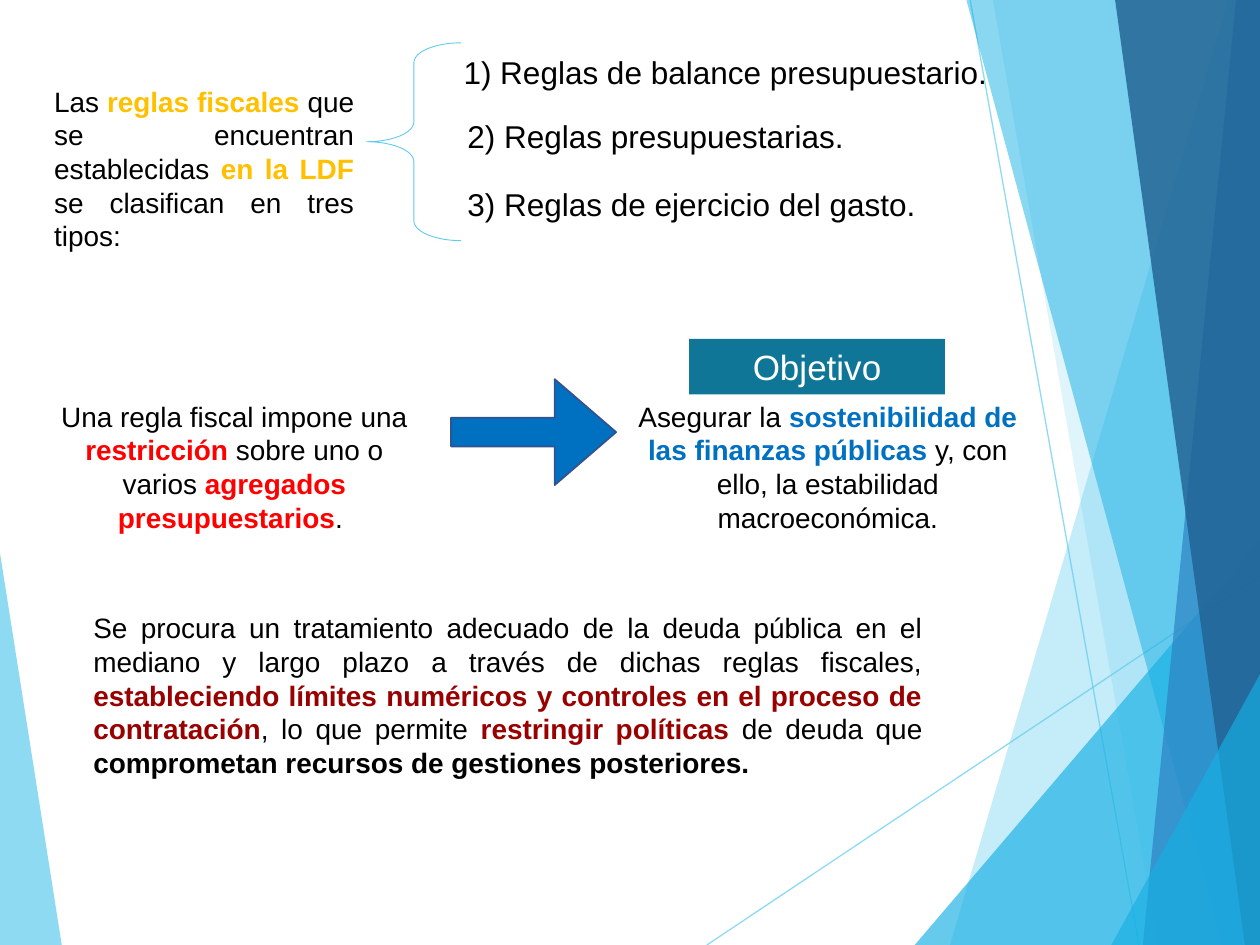
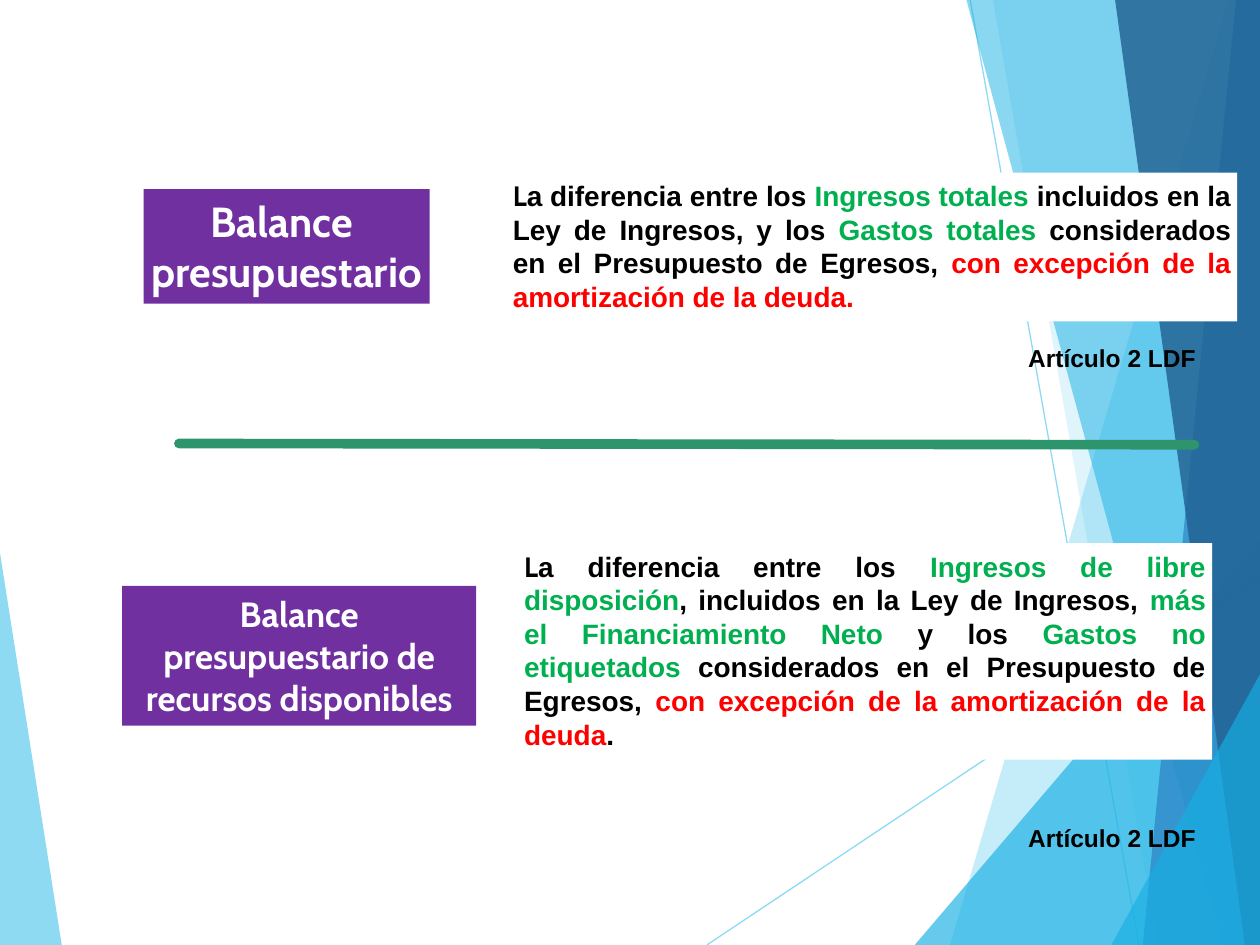
from pptx import Presentation, util as u
from pptx.dml.color import RGBColor
from pptx.enum import shapes, text
from pptx.oxml.ns import qn
from lxml import etree

WIDTH, HEIGHT = u.Inches(10), u.Inches(7.5)
COLUMNS, ROWS = 100, 75

BLACK, WHITE, RED, GREEN = "000000", "FFFFFF", "FF0000", "00B050"
GOLD, BLUE, NAVY, MAROON = "FFC000", "0070C0", "32538F", "990000"
TEAL, PURPLE, SEA = "0F7698", "7030A0", "2E946B"
SKY, CYAN, STEEL, DEEP = "5FCBEF", "17B0E4", "2E83C3", "226292"

LEFT, CENTER, JUSTIFY = (text.PP_ALIGN.LEFT, text.PP_ALIGN.CENTER,
                         text.PP_ALIGN.JUSTIFY)

LEFT_BAND = (SKY, 70, [(0, 43.9), (4.9, 75), (0, 75)])
RIGHT_BANDS = [
    (SKY, 36, [(97.5, 0), (75.4, 75), (100, 75), (100, 0)]),
    (SKY, 20, [(78.8, 0), (91.9, 75), (100, 75), (100, 0)]),
    (CYAN, 66, [(72.6, 75), (100, 42.9), (100, 75)]),
    (CYAN, 50, [(76.7, 0), (97, 75), (100, 75), (100, 0)]),
    (STEEL, 70, [(98.1, 0), (90.7, 75), (100, 75), (100, 0)]),
    (DEEP, 82, [(88.5, 0), (98.8, 75), (100, 75), (100, 0)]),
    (CYAN, 66, [(88.2, 75), (100, 53.5), (100, 75)]),
]
RAYS = [((56.1, 75), (100, 45.7)), ((77, 0), (90.4, 75))]


def color(code):
    return RGBColor.from_string(code)


def column(count):
    return round(WIDTH * count / COLUMNS)


def row(count):
    return round(HEIGHT * count / ROWS)


class Board:
    """Holds the deck style and draws grid-placed elements on the current page."""

    def __init__(self):
        self.deck = Presentation()
        self.deck.slide_width, self.deck.slide_height = WIDTH, HEIGHT
        self.page = None

    def new_page(self):
        self.page = self.deck.slides.add_slide(self.deck.slide_layouts[6])
        self.band(*LEFT_BAND)
        for start, end in RAYS:
            self.line(start, end, SKY, 0.75, opacity=70)
        for band in RIGHT_BANDS:
            self.band(*band)

    def fade(self, item, opacity):
        for tint in item._element.spPr.iter(qn("a:srgbClr")):
            etree.SubElement(tint, qn("a:alpha"), val=str(opacity * 1000))

    def paint(self, item, fill=None, outline=None, weight=1):
        item.shadow.inherit = False
        if fill:
            item.fill.solid()
            item.fill.fore_color.rgb = color(fill)
        else:
            item.fill.background()
        if outline:
            item.line.color.rgb = color(outline)
            item.line.width = u.Pt(weight)
        else:
            item.line.fill.background()

    def band(self, fill, opacity, corners):
        points = [(column(x), row(y)) for x, y in corners]
        builder = self.page.shapes.build_freeform(*points[0], scale=1.0)
        builder.add_line_segments(points[1:], close=True)
        band = builder.convert_to_shape()
        self.paint(band, fill)
        self.fade(band, opacity)

    def line(self, start, end, tint, weight, opacity=100, rounded=False):
        line = self.page.shapes.add_connector(
            shapes.MSO_CONNECTOR.STRAIGHT, column(start[0]), row(start[1]),
            column(end[0]), row(end[1]))
        line.line.color.rgb = color(tint)
        line.line.width = u.Pt(weight)
        if rounded:
            line.line._get_or_add_ln().set("cap", "rnd")
        if opacity < 100:
            self.fade(line, opacity)
        etree.SubElement(line._element.spPr, qn("a:effectLst"))

    def shape(self, kind, place, fill=None, outline=None, weight=1, adjust=()):
        x, y, wide, high = place
        shape = self.page.shapes.add_shape(
            kind, column(x), row(y), column(wide), row(high))
        for index, value in enumerate(adjust):
            shape.adjustments[index] = value
        self.paint(shape, fill, outline, weight)
        return shape

    def words(self, place, paragraphs, size, align=LEFT, fill=None, wrap=True):
        """Each span is (text,), or (text, color[, font]) for bold text."""
        if fill:
            box = self.shape(shapes.MSO_SHAPE.RECTANGLE, place, fill)
        else:
            x, y, wide, high = place
            box = self.page.shapes.add_textbox(
                column(x), row(y), column(wide), row(high))
        frame = box.text_frame
        frame.word_wrap = wrap
        frame.auto_size = text.MSO_AUTO_SIZE.SHAPE_TO_FIT_TEXT
        frame.vertical_anchor = text.MSO_ANCHOR.TOP
        frame.margin_left = frame.margin_right = u.Inches(0.05)
        frame.margin_top = frame.margin_bottom = u.Inches(0.05)
        for index, spans in enumerate(paragraphs):
            para = frame.add_paragraph() if index else frame.paragraphs[0]
            para.alignment = align
            for content, tint, font, bold in map(self.style, spans):
                span = para.add_run()
                span.text = content
                span.font.size = u.Pt(size)
                span.font.name = font
                span.font.bold = bold
                span.font.color.rgb = color(tint)

    def style(self, span):
        tint = span[1] if len(span) > 1 else BLACK
        font = span[2] if len(span) > 2 else "Arial"
        return span[0], tint, font, len(span) > 1

    def label(self, place, lines, size, wrap=True):
        self.words(place, [[(line, WHITE, "Cabin")] for line in lines],
                   size, CENTER, PURPLE, wrap)

    def definition(self, place, spans):
        opening = [("L", BLACK, "Cabin"), ("a diferencia entre los ", BLACK)]
        self.words(place, [opening + spans], 16, JUSTIFY, WHITE)

    def citation(self, top):
        self.words((81.1, top, 14.4, 3.2), [[("Artículo 2 LDF", BLACK)]],
                   14, JUSTIFY, wrap=False)


def fiscal_rules(board):
    board.new_page()
    board.words((3.8, 6.2, 24.8, 14.5), [[
        ("Las ",), ("reglas fiscales ", GOLD),
        ("que se encuentran establecidas ",), ("en la LDF ", GOLD),
        ("se clasifican en tres tipos:",)]], 16, JUSTIFY)
    rules = [(35.6, 3.7, " 1) Reglas de balance presupuestario."),
             (36.6, 8.8, "2) Reglas presupuestarias."),
             (36.6, 14.2, "3) Reglas de ejercicio del gasto.")]
    for left, top, rule in rules:
        board.words((left, top, 50, 4), [[(rule,)]], 18)
    board.shape(shapes.MSO_SHAPE.LEFT_BRACE, (29.1, 3.4, 7.5, 15.7),
                outline=SKY, weight=0.5, adjust=(0.21, 0.5))
    board.words((48.9, 31.2, 33.6, 11.8), [[
        ("Asegurar la ",), ("sostenibilidad de las finanzas públicas ", BLUE),
        ("y, con ello, la estabilidad macroeconómica.",)]], 16, CENTER)
    board.words((3.8, 31.2, 29.6, 11.8), [[
        ("Una regla fiscal impone una ",), ("restricción ", RED),
        ("sobre uno o varios ",), ("agregados presupuestarios", RED),
        (". ",)]], 16, CENTER)
    board.shape(shapes.MSO_SHAPE.RIGHT_ARROW, (35.8, 30.1, 13.1, 8.4),
                BLUE, NAVY, adjust=(0.27, 0.58))
    objective = board.shape(shapes.MSO_SHAPE.RECTANGLE,
                            (54.7, 26.9, 20.3, 4.4), TEAL)
    objective.text_frame.text = "Objetivo"
    para = objective.text_frame.paragraphs[0]
    para.alignment = CENTER
    para.runs[0].font.name = "Arial"
    para.runs[0].font.size = u.Pt(20)
    para.runs[0].font.color.rgb = color(WHITE)
    board.words((6.9, 48, 66.8, 14.5), [[
        ("Se procura un tratamiento adecuado de la deuda pública en el mediano "
         "y largo plazo a través de dichas reglas fiscales, ",),
        ("estableciendo límites numéricos y controles en el proceso de "
         "contratación", MAROON),
        (", lo que permite ",), ("restringir políticas", MAROON),
        (" de deuda que ",),
        ("comprometan recursos de gestiones posteriores.", BLACK)]],
        16, JUSTIFY, WHITE)


def budget_balances(board):
    board.new_page()
    board.definition((41.1, 43.1, 55.1, 17.2), [
        ("Ingresos de libre disposición", GREEN),
        (", incluidos en la Ley de Ingresos, ", BLACK),
        ("más el Financiamiento Neto", GREEN), (" y los ", BLACK),
        ("Gastos no etiquetados ", GREEN),
        ("considerados en el Presupuesto de Egresos, ", BLACK),
        ("con excepción de la amortización de la deuda", RED), (".", BLACK)])
    board.definition((40.2, 13.7, 58, 11.8), [
        ("Ingresos totales ", GREEN),
        ("incluidos en la Ley de Ingresos, y los ", BLACK),
        ("Gastos totales ", GREEN),
        ("considerados en el Presupuesto de Egresos, ", BLACK),
        ("con excepción de la amortización de la deuda.", RED)])
    board.label((11.4, 15, 22.7, 9.1), ["Balance ", "presupuestario"], 24,
                wrap=False)
    board.label((9.7, 46.5, 28.1, 11.1),
                ["Balance presupuestario de recursos disponibles"], 20)
    for top in (26.7, 64.8):
        board.citation(top)
    board.line((14.2, 35.2), (94.8, 35.3), SEA, 5.5, rounded=True)


def main():
    board = Board()
    fiscal_rules(board)
    budget_balances(board)
    board.deck.save("out.pptx")


if __name__ == "__main__":
    main()
